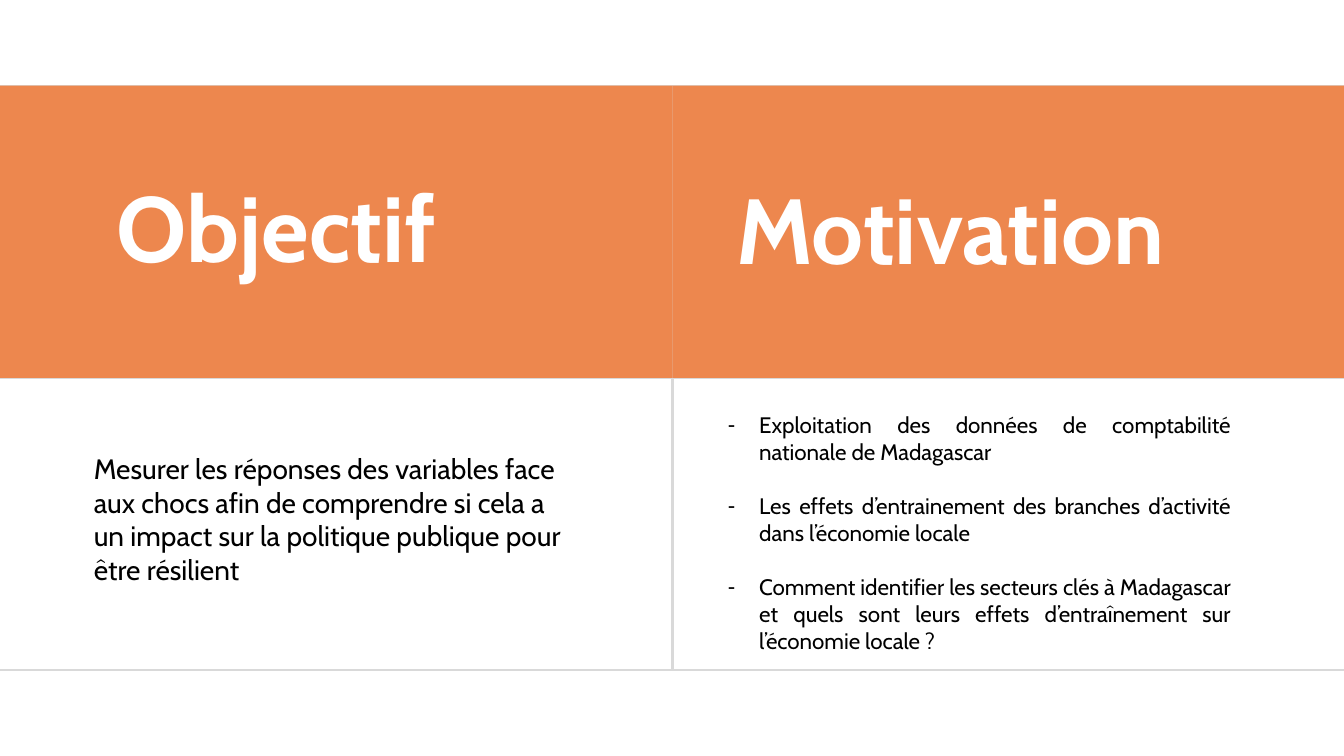
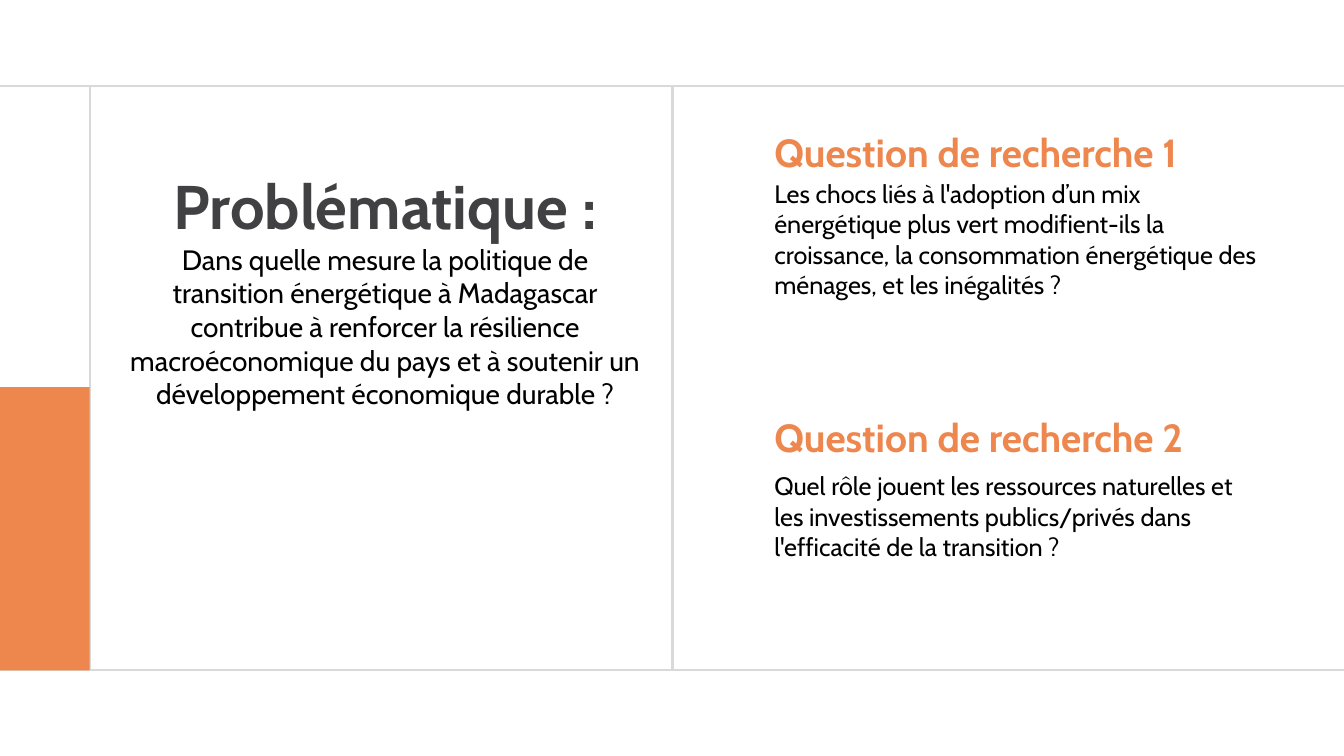
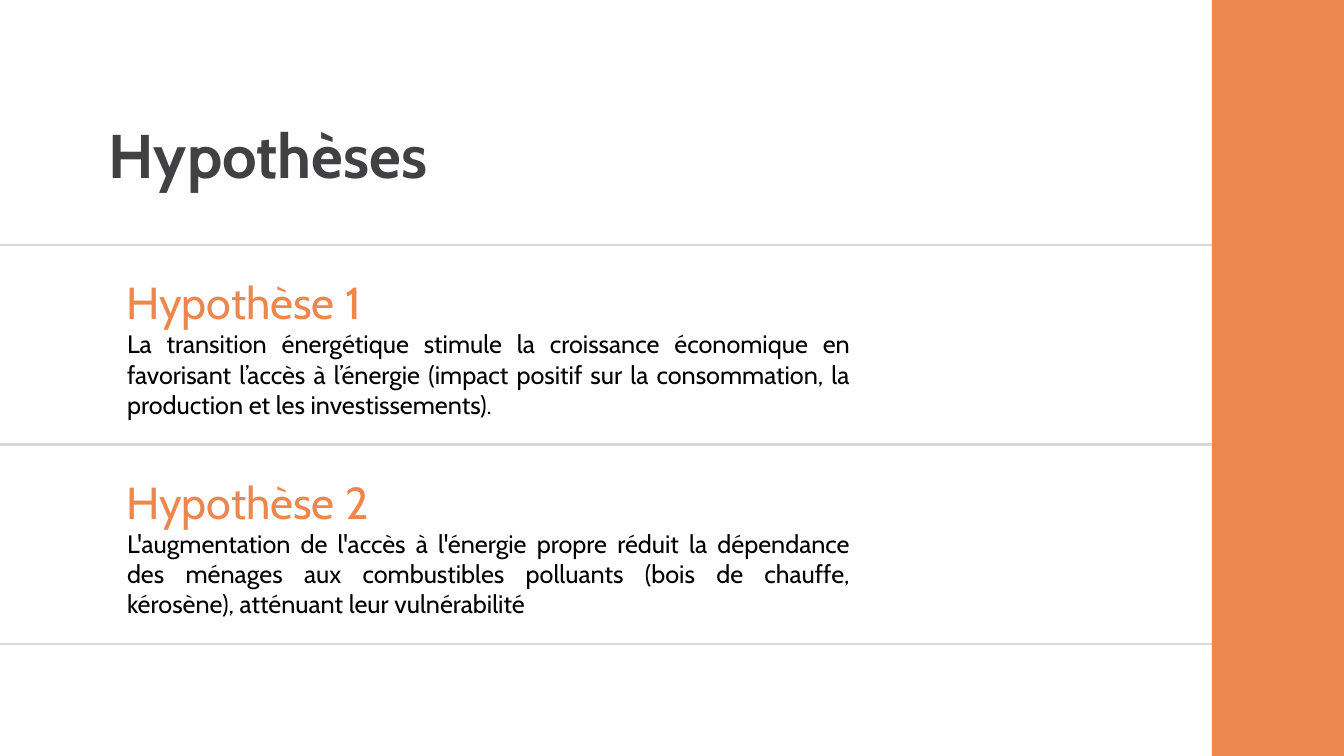
from dataclasses import dataclass

from lxml.etree import SubElement
from pptx import Presentation
from pptx.dml.fill import FillFormat
from pptx.dml.color import RGBColor
from pptx.enum.shapes import MSO_CONNECTOR as Connector, MSO_SHAPE as Preset
from pptx.enum.text import MSO_ANCHOR as Anchor, MSO_AUTO_SIZE as AutoSize, PP_ALIGN as Align
from pptx.oxml.ns import qn
from pptx.presentation import Presentation as Deck
from pptx.shapes.placeholder import SlidePlaceholder
from pptx.slide import Slide
from pptx.util import Inches, Pt

WIDTH, HEIGHT = 13.33, 7.5
TOP, BOTTOM, CENTER = 0.85, 6.65, 6.67
MIDDLE = (TOP + BOTTOM) / 2
SIDE = 0.89
ROW_TOP, ROW = 2.43, 1.98
FONT = "Cabin"
ORANGE, GREY, DARK, BLACK, WHITE = "ED874E", "D9D9D9", "414042", "000000", "FFFFFF"
COMPARISON_LAYOUT = 4


@dataclass(frozen=True)
class Style:
    size: float
    color: str = BLACK
    bold: bool = False
    align: Align = Align.LEFT
    dash: bool = False


@dataclass(frozen=True)
class Box:
    left: float
    top: float
    width: float
    height: float
    content: list[tuple[str, Style]]


@dataclass(frozen=True)
class Rule:
    x1: float
    y1: float
    x2: float
    y2: float


@dataclass(frozen=True)
class Band:
    left: float
    top: float
    width: float
    height: float


@dataclass(frozen=True)
class Page:
    rules: list[Rule]
    bands: list[Band]
    boxes: list[Box]


BANNER = Style(66, WHITE, bold=True)
TITLE = Style(44, DARK, bold=True)
CENTERED_TITLE = Style(44, DARK, bold=True, align=Align.CENTER)
QUESTION = Style(28, ORANGE, bold=True)
HYPOTHESIS = Style(32, ORANGE)
LEAD = Style(20)
CENTERED_LEAD = Style(20, align=Align.CENTER)
BODY = Style(18)
JUSTIFIED = Style(18, align=Align.JUSTIFY)
DASHED = Style(16, align=Align.JUSTIFY, dash=True)


def across(y: float) -> Rule:
    """Return a rule over the full slide width."""
    return Rule(0, y, WIDTH, y)


def upright(x: float) -> Rule:
    """Return a rule between the two frame lines."""
    return Rule(x, BOTTOM, x, TOP)


FRAME = [across(TOP), across(BOTTOM), upright(CENTER)]
MOTIVATIONS = [
    "Exploitation des données de comptabilité nationale de Madagascar",
    "Les effets d’entrainement des branches d’activité dans l’économie locale",
    "Comment identifier les secteurs clés à Madagascar et quels sont leurs effets "
    "d’entraînement sur l’économie locale ?",
]
HYPOTHESES = [
    "La transition énergétique stimule la croissance économique en favorisant l’accès à "
    "l’énergie (impact positif sur la consommation, la production et les investissements).",
    "L'augmentation de l'accès à l'énergie propre réduit la dépendance des ménages aux "
    "combustibles polluants (bois de chauffe, kérosène), atténuant leur vulnérabilité",
]


def hypothesis_boxes() -> list[Box]:
    """Return a heading and a text for each hypothesis row."""
    boxes = []
    for index, text in enumerate(HYPOTHESES):
        top = ROW_TOP + index * ROW
        boxes.append(Box(1.15, top + 0.25, 5.01, 0.64, [(f"Hypothèse {index + 1}", HYPOTHESIS)]))
        boxes.append(Box(1.16, top + 0.78, 7.37, 1.01, [(text, JUSTIFIED)]))
    return boxes


PAGES = [
    Page(
        FRAME + [across(MIDDLE)],
        [Band(left, TOP, CENTER, MIDDLE - TOP) for left in (0, CENTER)],
        [
            Box(1.06, 1.64, 4.91, 1.21, [("Objectif", BANNER)]),
            Box(0.83, 4.43, 5.01, 1.68, [(
                "Mesurer les réponses des variables face aux chocs afin de comprendre si "
                "cela a un impact sur la politique publique pour être résilient", LEAD)]),
            Box(7.2, 1.66, 5.26, 1.21, [("Motivation", BANNER)]),
            Box(7.12, 4.03, 5.19, 2.52, [(text, DASHED) for text in MOTIVATIONS]),
        ],
    ),
    Page(
        FRAME + [upright(SIDE)],
        [Band(0, 3.84, SIDE, BOTTOM - 3.84)],
        [
            Box(1.19, 1.62, 5.26, 3.2, [
                ("Problématique :", CENTERED_TITLE),
                ("Dans quelle mesure la politique de transition énergétique à Madagascar "
                 "contribue à renforcer la résilience macroéconomique du pays et à soutenir "
                 "un développement économique durable ?", CENTERED_LEAD),
            ]),
            Box(7.58, 1.22, 4.94, 0.57, [("Question de recherche 1", QUESTION)]),
            Box(7.58, 1.72, 5.01, 1.62, [(
                "Les chocs liés à l'adoption d’un mix énergétique plus vert modifient-ils la "
                "croissance, la consommation énergétique des ménages, et les inégalités ?", BODY)]),
            Box(7.58, 4.05, 4.94, 0.57, [("Question de recherche 2", QUESTION)]),
            Box(7.58, 4.62, 5.01, 1.01, [(
                "Quel rôle jouent les ressources naturelles et les investissements "
                "publics/privés dans l'efficacité de la transition ?", BODY)]),
        ],
    ),
    Page(
        [across(ROW_TOP + index * ROW) for index in range(len(HYPOTHESES) + 1)],
        [Band(12.02, 0, WIDTH - 12.02, HEIGHT)],
        [Box(0.98, 1.11, 4.31, 0.84, [("Hypothèses", TITLE)])] + hypothesis_boxes(),
    ),
]


def paint(fill: FillFormat, color: str) -> None:
    """Give a fill one solid colour."""
    fill.solid()
    fill.fore_color.rgb = RGBColor.from_string(color)


def draw_rule(slide: Slide, rule: Rule) -> None:
    """Draw a thin grey line without shadow."""
    ends = [Inches(value) for value in (rule.x1, rule.y1, rule.x2, rule.y2)]
    connector = slide.shapes.add_connector(Connector.STRAIGHT, *ends)
    connector.line.width = Pt(1.5)
    paint(connector.line.fill, GREY)
    SubElement(connector.element.spPr, qn("a:effectLst"))


def draw_band(slide: Slide, band: Band) -> None:
    """Draw an orange rectangle without outline."""
    place = [Inches(value) for value in (band.left, band.top, band.width, band.height)]
    shape = slide.shapes.add_shape(Preset.RECTANGLE, *place)
    shape.shadow.inherit = False
    paint(shape.fill, ORANGE)
    shape.line.fill.background()


def write_box(holder: SlidePlaceholder, box: Box) -> None:
    """Move a placeholder to the front and fill it with styled text."""
    holder.element.getparent().append(holder.element)
    holder.left, holder.top = Inches(box.left), Inches(box.top)
    holder.width, holder.height = Inches(box.width), Inches(box.height)
    frame = holder.text_frame
    frame.word_wrap = True
    frame.auto_size = AutoSize.SHAPE_TO_FIT_TEXT
    frame.vertical_anchor = Anchor.TOP
    for index, (text, style) in enumerate(box.content):
        para = frame.add_paragraph() if index else frame.paragraphs[0]
        para.alignment = style.align
        para.space_before = Pt(19.4 if style.dash and index else 0)
        properties = para._p.get_or_add_pPr()
        indent = Inches(0.31) if style.dash else 0
        properties.set("marL", str(indent))
        properties.set("indent", str(-indent))
        if style.dash:
            SubElement(properties, qn("a:buChar"), char="-")
        else:
            SubElement(properties, qn("a:buNone"))
        span = para.add_run()
        span.text = text
        span.font.name = FONT
        span.font.size = Pt(style.size)
        span.font.bold = style.bold
        paint(span.font.fill, style.color)


def draw_page(deck: Deck, page: Page) -> None:
    """Add a slide with its rules, bands and texts."""
    slide = deck.slides.add_slide(deck.slide_layouts[COMPARISON_LAYOUT])
    holders = list(slide.placeholders)
    for rule in page.rules:
        draw_rule(slide, rule)
    for band in page.bands:
        draw_band(slide, band)
    for holder, box in zip(holders, page.boxes):
        write_box(holder, box)
    for holder in holders[len(page.boxes):]:
        holder.element.getparent().remove(holder.element)


def main() -> None:
    """Build and save the deck."""
    deck = Presentation()
    deck.slide_width, deck.slide_height = Inches(WIDTH), Inches(HEIGHT)
    for page in PAGES:
        draw_page(deck, page)
    deck.save("out.pptx")


if __name__ == "__main__":
    main()
